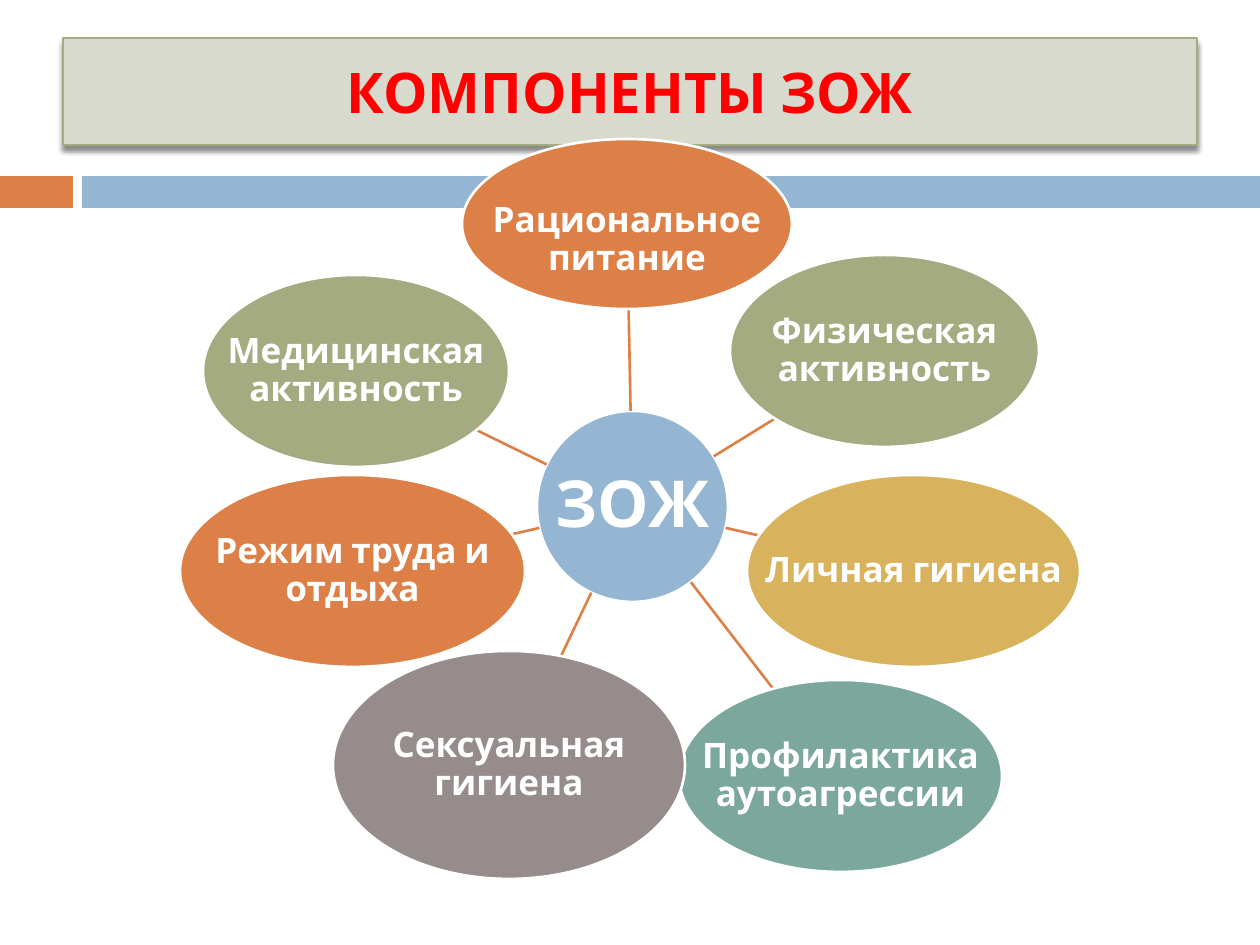
from math import hypot

from lxml.etree import SubElement
from pptx import Presentation
from pptx.dml.color import RGBColor
from pptx.enum.shapes import MSO_CONNECTOR, MSO_SHAPE
from pptx.enum.text import MSO_ANCHOR, PP_ALIGN
from pptx.oxml.ns import qn
from pptx.util import Pt

PX = 914400 / 126
SIZE = (1260, 945)
COLORS = {
    "orange": "DD8047", "blue": "94B6D2", "green": "A5AB81", "gold": "D8B25C",
    "teal": "7BA79D", "gray": "968C8C", "pale": "D8DACD", "red": "FF0000",
    "white": "FFFFFF", "black": "000000",
}
TITLE = ("КОМПОНЕНТЫ ЗОЖ", (63, 38, 1134, 107))
BARS = [("orange", (0, 176, 73, 32)), ("blue", (82, 176, 1178, 32))]
HUB = ("ЗОЖ", "blue", (537, 411, 191, 191))
# text, colour, box, extra space above the text
PETALS = [
    ("Рациональное питание", "orange", (462, 139, 330, 170), 33),
    ("Физическая активность", "green", (730, 255, 309, 192), 0),
    ("Личная гигиена", "gold", (747, 475, 333, 192), 0),
    ("Профилактика аутоагрессии", "teal", (679, 680, 323, 192), 0),
    ("Сексуальная гигиена", "gray", (333, 651, 352, 228), 0),
    ("Режим труда и отдыха", "orange", (180, 475, 345, 192), 0),
    ("Медицинская активность", "green", (203, 275, 306, 192), 0),
]


def emu(nums):
    return [round(n * PX) for n in nums]


def rgb(name):
    return RGBColor.from_string(COLORS[name])


def add_shape(kind, box, fill, line=None, width=0):
    shape = shapes.add_shape(kind, *emu(box))
    shape.shadow.inherit = False
    shape.fill.solid()
    shape.fill.fore_color.rgb = rgb(fill)
    if line:
        shape.line.color.rgb = rgb(line)
        shape.line.width = Pt(width)
    else:
        shape.line.fill.background()
    return shape


def set_text(shape, text, size, color, **frame):
    look = {"word_wrap": True, "vertical_anchor": MSO_ANCHOR.MIDDLE, **frame}
    for key, val in look.items():
        setattr(shape.text_frame, key, val)
    para = shape.text_frame.paragraphs[0]
    para.alignment = PP_ALIGN.CENTER
    run = para.add_run()
    run.text = text
    for key, val in {"name": "Cabin", "size": Pt(size), "bold": True}.items():
        setattr(run.font, key, val)
    run.font.color.rgb = rgb(color)
    return para


def add_shadow(shape):
    effects = shape.element.spPr.find(qn("a:effectLst"))
    shadow = SubElement(effects, qn("a:outerShdw"), blurRad=str(Pt(3)),
                        dist=str(Pt(2.4)), dir="5400000", rotWithShape="0")
    color = SubElement(shadow, qn("a:srgbClr"), val=COLORS["black"])
    SubElement(color, qn("a:alpha"), val="45000")


def add_oval(text, fill, box, size, inset, drop=0):
    """Draw an ellipse with a label that may use its full width."""
    add_shape(MSO_SHAPE.OVAL, box, fill, "white", 1.5)
    label = shapes.add_textbox(*emu(box))
    sides = {f"margin_{side}": round(inset * PX)
             for side in ("left", "right", "bottom")}
    para = set_text(label, text, size, "white", **sides,
                    margin_top=round((inset + drop) * PX))
    para.line_spacing = 0.9


def center(box):
    left, top, width, height = box
    return left + width / 2, top + height / 2


def edge(box, goal):
    """Point where the ray from the ellipse centre to goal leaves the ellipse."""
    x, y = center(box)
    dx, dy = goal[0] - x, goal[1] - y
    part = 1 / hypot(dx / (box[2] / 2), dy / (box[3] / 2))
    return x + dx * part, y + dy * part


def add_spoke(hub, petal):
    start, end = edge(hub, center(petal)), edge(petal, center(hub))
    spoke = shapes.add_connector(MSO_CONNECTOR.STRAIGHT, *emu(start + end))
    spoke.line.color.rgb = rgb("orange")
    spoke.line.width = Pt(1.5)
    SubElement(spoke.element.spPr, qn("a:effectLst"))


deck = Presentation()
deck.slide_width, deck.slide_height = emu(SIZE)
shapes = deck.slides.add_slide(deck.slide_layouts[6]).shapes

for fill, box in BARS:
    add_shape(MSO_SHAPE.RECTANGLE, box, fill)

text, box = TITLE
banner = add_shape(MSO_SHAPE.RECTANGLE, box, "pale", "green", 0.79)
add_shadow(banner)
set_text(banner, text, 32, "red")

add_oval(*HUB, size=37, inset=4)
for text, fill, box, drop in PETALS:
    add_spoke(HUB[2], box)
    add_oval(text, fill, box, 20, 1, drop)

deck.save("out.pptx")
